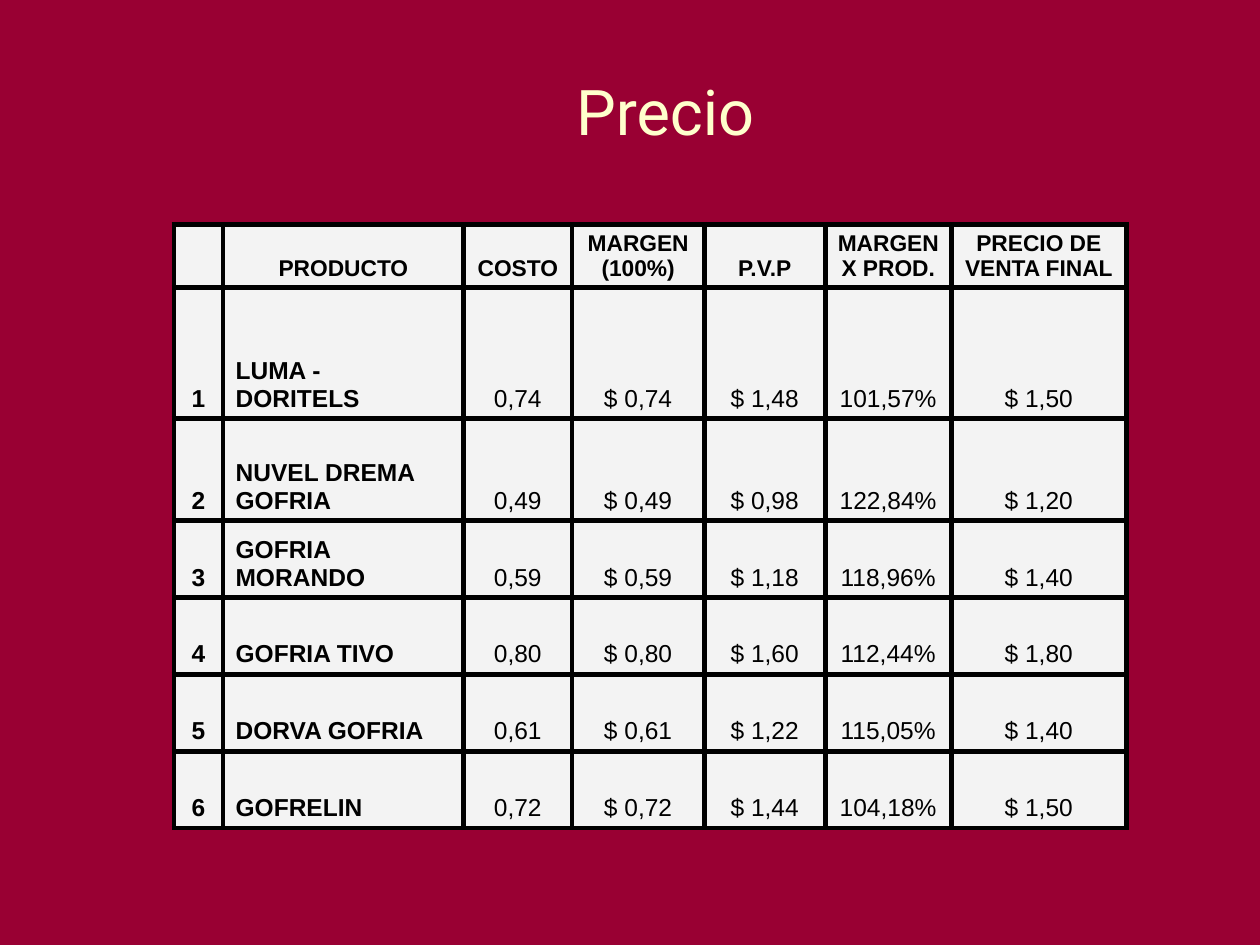
from lxml.etree import SubElement
from pptx import Presentation
from pptx.dml.color import RGBColor
from pptx.enum.text import MSO_ANCHOR, MSO_AUTO_SIZE, PP_ALIGN
from pptx.oxml.ns import qn
from pptx.util import Inches, Pt

HEADERS = ["", "PRODUCTO", "COSTO", "MARGEN (100%)", "P.V.P",
           "MARGEN X PROD.", "PRECIO DE VENTA FINAL"]
# Product, cost, retail price, margin, final price
PRODUCTS = [
    ("LUMA - DORITELS", "0,74", "1,48", "101,57%", "1,50"),
    ("NUVEL DREMA GOFRIA", "0,49", "0,98", "122,84%", "1,20"),
    ("GOFRIA MORANDO", "0,59", "1,18", "118,96%", "1,40"),
    ("GOFRIA TIVO", "0,80", "1,60", "112,44%", "1,80"),
    ("DORVA GOFRIA", "0,61", "1,22", "115,05%", "1,40"),
    ("GOFRELIN", "0,72", "1,44", "104,18%", "1,50"),
]
COLUMN_WIDTHS = [0.39, 1.91, 0.86, 1.05, 0.96, 1, 1.39]
ROW_HEIGHTS = [0.5, 1.04, 0.81, 0.61, 0.61, 0.61, 0.61]


def paint(target, color):
    """Give a fill a solid colour."""
    target.solid()
    target.fore_color.rgb = RGBColor.from_string(color)


def style_paragraph(para, font, size, color, bold=False, align=PP_ALIGN.CENTER):
    para.alignment = align
    para.font.name = font
    para.font.size = Pt(size)
    para.font.bold = bold
    paint(para.font.fill, color)


def add_borders(cell, color, width):
    properties = cell._tc.get_or_add_tcPr()
    for side in ("a:lnL", "a:lnR", "a:lnT", "a:lnB"):
        line = SubElement(properties, qn(side), w=str(Pt(width)))
        fill = SubElement(line, qn("a:solidFill"))
        SubElement(fill, qn("a:srgbClr"), val=color)


def place_title(page, text, left, top, width, height):
    title = page.shapes.title
    title.left, title.top = Inches(left), Inches(top)
    title.width, title.height = Inches(width), Inches(height)
    frame = title.text_frame
    frame.text = text
    frame.word_wrap = False
    frame.auto_size = MSO_AUTO_SIZE.NONE
    frame.vertical_anchor = MSO_ANCHOR.MIDDLE
    style_paragraph(frame.paragraphs[0], "Roboto", 36, "FFFFCC")


def place_price_table(page, left, top, width, height):
    rows = [HEADERS]
    for number, (name, cost, retail, margin, final) in enumerate(PRODUCTS, 1):
        rows.append([str(number), name, cost, f"$ {cost}", f"$ {retail}",
                     margin, f"$ {final}"])
    table = page.shapes.add_table(
        len(rows), len(HEADERS), Inches(left), Inches(top),
        Inches(width), Inches(height)).table
    for column, column_width in zip(table.columns, COLUMN_WIDTHS):
        column.width = Inches(column_width)
    for row, row_height in zip(table.rows, ROW_HEIGHTS):
        row.height = Inches(row_height)

    for r, values in enumerate(rows):
        for c, value in enumerate(values):
            cell = table.cell(r, c)
            cell.text = value
            cell.vertical_anchor = MSO_ANCHOR.BOTTOM
            add_borders(cell, "000000", 3)
            paint(cell.fill, "F3F3F3")
            is_name = r > 0 and c == 1
            style_paragraph(
                cell.text_frame.paragraphs[0], "Arial", 14 if r else 13,
                "000000", bold=r == 0 or c < 2,
                align=PP_ALIGN.LEFT if is_name else PP_ALIGN.CENTER)


def main():
    deck = Presentation()
    deck.slide_width, deck.slide_height = Inches(10), Inches(7.5)
    page = deck.slides.add_slide(deck.slide_layouts[5])
    paint(page.background.fill, "990033")
    place_title(page, "Precio", 2.01, 0.52, 6.54, 0.71)
    place_price_table(page, 1.38, 1.78, sum(COLUMN_WIDTHS), sum(ROW_HEIGHTS))
    deck.save("out.pptx")


if __name__ == "__main__":
    main()
